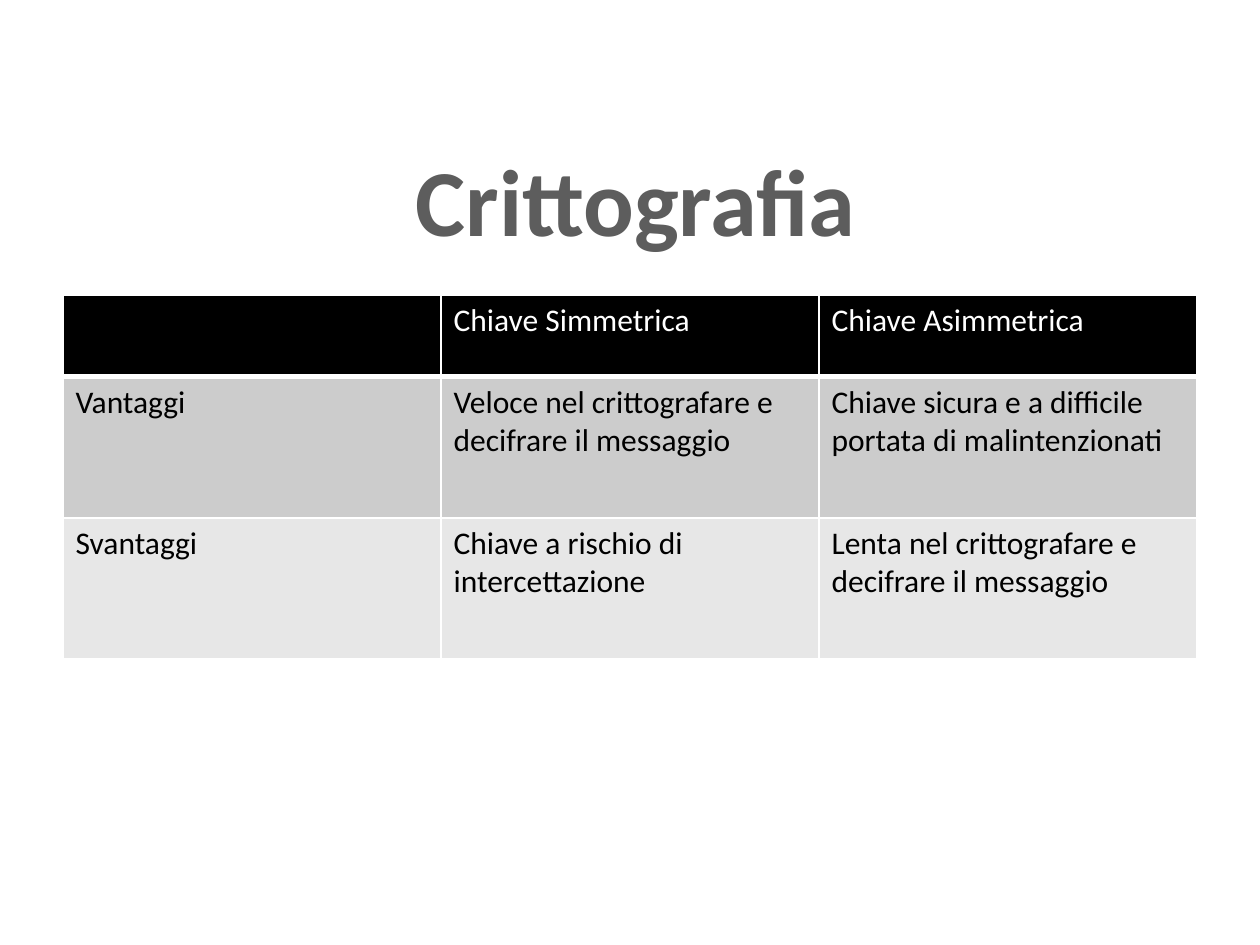
from lxml import etree
from pptx import Presentation, util as u
from pptx.dml.color import RGBColor
from pptx.enum import text
from pptx.oxml import ns

TITLE = "Crittografia"
ROWS = [
    ("", "Chiave Simmetrica", "Chiave Asimmetrica"),
    ("Vantaggi", "Veloce nel crittografare e decifrare il messaggio",
     "Chiave sicura e a difficile portata di malintenzionati"),
    ("Svantaggi", "Chiave a rischio di intercettazione",
     "Lenta nel crittografare e decifrare il messaggio"),
]
COLORS = {"title": "5D5D5D", "header": "000000", "header_text": "FFFFFF",
          "body_text": "000000", "border": "FFFFFF"}
ROW_FILLS = [COLORS["header"], "CCCCCC", "E7E7E7"]
ROW_HEIGHTS = [0.65, 1.12, 1.12]
WIDTH, HEIGHT = 10, 7.5
MARGIN = WIDTH * 0.05
TABLE_TOP = 2.34
TITLE_BOX = {"left": 2.87, "top": 1.07, "width": 4.35, "height": 1.01}
TITLE_FONT = {"name": "Calibri", "size": u.Pt(54), "bold": True}
CELL_FONT = {"name": "Calibri", "size": u.Pt(18), "bold": False}


def style(font, values, color):
    for key, value in values.items():
        setattr(font, key, value)
    font.color.rgb = RGBColor.from_string(color)


def add_borders(cell, widths):
    properties = cell._tc.get_or_add_tcPr()
    for side, points in widths.items():
        line = etree.SubElement(properties, ns.qn(f"a:ln{side}"), w=str(u.Pt(points)))
        fill = etree.SubElement(line, ns.qn("a:solidFill"))
        etree.SubElement(fill, ns.qn("a:srgbClr"), val=COLORS["border"])


def add_title(slide):
    title = slide.shapes.title
    for key, inches in TITLE_BOX.items():
        setattr(title, key, u.Inches(inches))
    frame = title.text_frame
    frame.text = TITLE
    frame.word_wrap = False
    frame.auto_size = text.MSO_AUTO_SIZE.NONE
    frame.vertical_anchor = text.MSO_ANCHOR.MIDDLE
    heading = frame.paragraphs[0]
    heading.alignment = text.PP_ALIGN.CENTER
    style(heading.runs[0].font, TITLE_FONT, COLORS["title"])


def add_comparison(slide):
    comparison = slide.shapes.add_table(
        len(ROWS), len(ROWS[0]), u.Inches(MARGIN), u.Inches(TABLE_TOP),
        u.Inches(WIDTH - 2 * MARGIN), u.Inches(sum(ROW_HEIGHTS))).table
    for r, (entries, fill, height) in enumerate(zip(ROWS, ROW_FILLS, ROW_HEIGHTS)):
        comparison.rows[r].height = u.Inches(height)
        color = COLORS["body_text" if r else "header_text"]
        for c, entry in enumerate(entries):
            cell = comparison.cell(r, c)
            add_borders(cell, {"L": 1, "R": 1, "T": 1, "B": 1 if r else 3})
            cell.fill.solid()
            cell.fill.fore_color.rgb = RGBColor.from_string(fill)
            cell.text = entry
            style(cell.text_frame.paragraphs[0].font, CELL_FONT, color)
            for run in cell.text_frame.paragraphs[0].runs:
                style(run.font, CELL_FONT, color)


def main():
    deck = Presentation()
    deck.slide_width, deck.slide_height = u.Inches(WIDTH), u.Inches(HEIGHT)
    slide = deck.slides.add_slide(deck.slide_layouts.get_by_name("Title Only"))
    add_title(slide)
    add_comparison(slide)
    deck.save("out.pptx")


if __name__ == "__main__":
    main()
